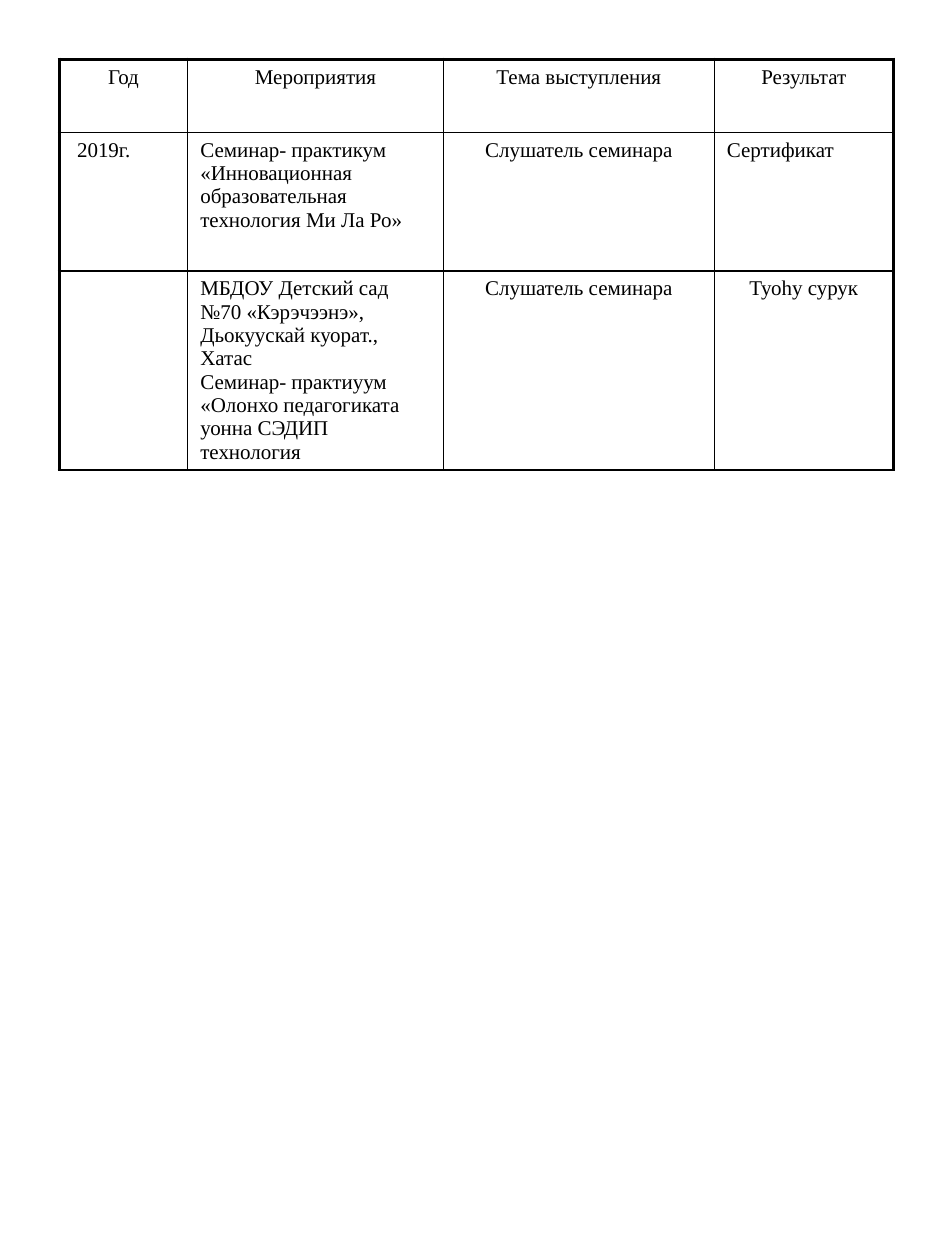
from lxml import etree
from pptx import Presentation, util as u
from pptx.dml.color import RGBColor
from pptx.enum import text
from pptx.oxml.ns import qn

HEX = {"ink": "000000", "page": "FFFFFF"}
FONT, SIZE = "Times New Roman", 12
THIN, THICK = 1, 2.25
LEFT, TOP = 0.47, 0.47
COLS = [1.02, 2.03, 2.15, 1.42]
ROWS = [0.58, 1.1, 1.58]

# Each cell holds its paragraphs, split by line breaks.
CELLS = [
    ["Год", "Мероприятия", "Тема выступления", "Результат"],
    [" 2019г.",
     "Семинар- практикум «Инновационная образовательная технология Ми Ла Ро»",
     "Слушатель семинара", "Сертификат"],
    ["",
     "МБДОУ Детский сад №70 «Кэрэчээнэ», Дьокуускай куорат., Хатас\n"
     "Семинар- практиуум «Олонхо педагогиката уонна СЭДИП технология",
     "Слушатель семинара", "Туоhу сурук"],
]
CENTRED = {(0, 0), (0, 1), (0, 2), (0, 3), (1, 2), (2, 2), (2, 3)}


def border(cell, widths):
    """Draw the cell's sides; widths maps L, R, T, B to points."""
    props = cell._tc.get_or_add_tcPr()
    for i, (side, width) in enumerate(widths.items()):
        line = etree.Element(qn(f"a:ln{side}"), w=str(u.Pt(width)))
        fill = etree.SubElement(line, qn("a:solidFill"))
        etree.SubElement(fill, qn("a:srgbClr"), val=HEX["ink"])
        props.insert(i, line)


def write(cell, words, head, centre):
    cell.text = words
    for para in cell.text_frame.paragraphs:
        para.font.name = FONT
        para.font.size = u.Pt(SIZE)
        para.font.bold = False
        para.font.color.rgb = RGBColor.from_string(HEX["ink"])
        para.alignment = text.PP_ALIGN.CENTER if centre else text.PP_ALIGN.LEFT
        if head:
            para.space_before = u.Pt(SIZE * 0.2)


def main():
    deck = Presentation()
    deck.slide_width, deck.slide_height = u.Inches(7.5), u.Inches(10)
    slide = deck.slides.add_slide(deck.slide_layouts[6])
    table = slide.shapes.add_table(
        len(ROWS), len(COLS), u.Inches(LEFT), u.Inches(TOP),
        u.Inches(sum(COLS)), u.Inches(sum(ROWS))).table
    table.horz_banding = False
    for col, width in zip(table.columns, COLS):
        col.width = u.Inches(width)
    for row, height in zip(table.rows, ROWS):
        row.height = u.Inches(height)

    for r, line in enumerate(CELLS):
        for c, words in enumerate(line):
            cell = table.cell(r, c)
            cell.fill.solid()
            cell.fill.fore_color.rgb = RGBColor.from_string(HEX["page"])
            write(cell, words, r == 0, (r, c) in CENTRED)
            border(cell, {
                "L": THICK if c == 0 else THIN,
                "R": THICK if c == len(COLS) - 1 else THIN,
                "T": THICK if r == 0 else THIN,
                "B": THIN,
            })
    deck.save("out.pptx")


if __name__ == "__main__":
    main()
